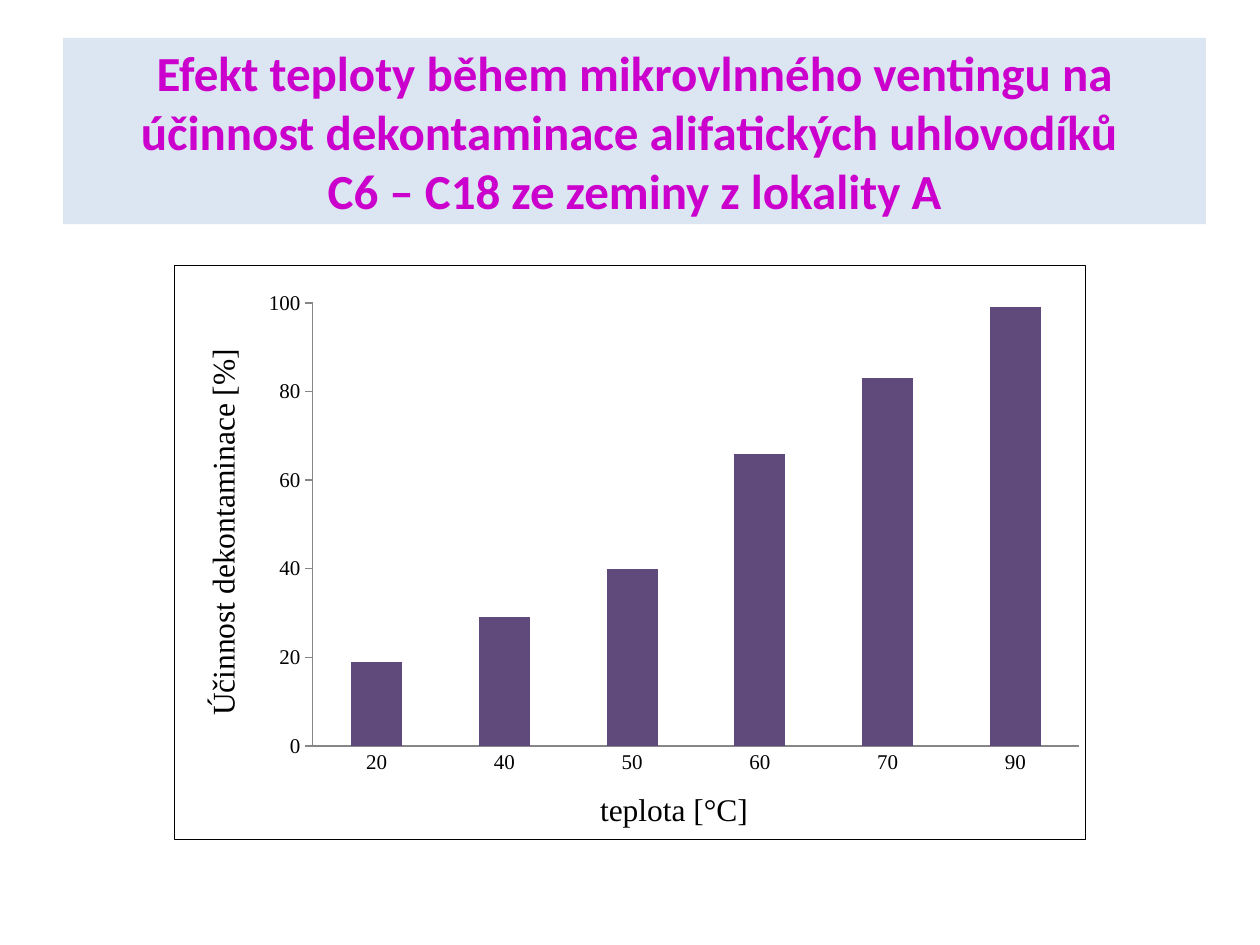
from lxml import etree
from pptx import Presentation
from pptx.chart.data import CategoryChartData
from pptx.dml.color import RGBColor
from pptx.enum.chart import XL_CHART_TYPE as CT, XL_TICK_MARK as TICK
from pptx.enum.text import MSO_ANCHOR as ANCHOR, PP_ALIGN as ALIGN
from pptx.oxml import parse_xml
from pptx.oxml.ns import nsdecls, qn
from pptx.util import Inches, Pt

SERIF = "Times New Roman"
TITLE = ("Efekt teploty během mikrovlnného ventingu na účinnost "
         "dekontaminace alifatických uhlovodíků \vC6 – C18 ze zeminy z lokality A")
EFFICIENCY = {"20": 19, "40": 29, "50": 40, "60": 66, "70": 83, "90": 99}


def rgb(color):
    return RGBColor.from_string(color)


def format_font(font, name=SERIF, size=12, color="000000", bold=False):
    font.name, font.size, font.bold = name, Pt(size), bold
    font.color.rgb = rgb(color)


def set_text(tf, text, align=ALIGN.CENTER, **fmt):
    p = tf.paragraphs[0]
    p.text, p.alignment = text, align
    for r in p.runs:
        format_font(r.font, **fmt)


def set_plot_layout(chart, x, y, w, h):
    """Fix the inner plot area, in fractions of the chart."""
    area = chart._chartSpace.chart.plotArea
    for old in area.findall(qn("c:layout")):
        area.remove(old)
    layout = etree.Element(qn("c:layout"))
    manual = etree.SubElement(layout, qn("c:manualLayout"))
    for tag, val in (("layoutTarget", "inner"), ("xMode", "edge"), ("yMode", "edge"),
                     ("x", x), ("y", y), ("w", w), ("h", h)):
        etree.SubElement(manual, qn(f"c:{tag}")).set("val", str(val))
    area.insert(0, layout)


def set_chart_border(chart, color, width):
    chart._chartSpace.chart.addnext(parse_xml(
        f'<c:spPr {nsdecls("c", "a")}><a:noFill/><a:ln w="{Pt(width)}"><a:solidFill>'
        f'<a:srgbClr val="{color}"/></a:solidFill></a:ln></c:spPr>'))


def format_axis(axis, title, tick):
    axis.has_major_gridlines = False
    axis.major_tick_mark, axis.minor_tick_mark = tick, TICK.NONE
    axis.format.line.color.rgb = rgb("868686")
    axis.format.line.width = Pt(0.75)
    format_font(axis.tick_labels.font)
    set_text(axis.axis_title.text_frame, title, size=18)


def add_title(slide, x, y, w, h):
    sp = slide.shapes.title
    sp.left, sp.top, sp.width, sp.height = map(Inches, (x, y, w, h))
    sp.fill.solid()
    sp.fill.fore_color.rgb = rgb("DCE6F2")
    tf = sp.text_frame
    tf.word_wrap, tf.vertical_anchor = True, ANCHOR.MIDDLE
    set_text(tf, TITLE, name="Calibri", size=28, color="CC00CC", bold=True)


def add_efficiency_chart(slide, x, y, w, h):
    data = CategoryChartData(number_format="0")
    data.categories = list(EFFICIENCY)
    data.add_series("Series 1", list(EFFICIENCY.values()))
    chart = slide.shapes.add_chart(CT.COLUMN_CLUSTERED,
                                   *map(Inches, (x, y, w, h)), data).chart
    chart.has_legend = chart.has_title = False
    set_chart_border(chart, "000000", 0.5)
    set_plot_layout(chart, 0.152, 0.066, 0.841, 0.771)
    format_font(chart.font)

    # Columns
    plot = chart.plots[0]
    plot.gap_width, plot.vary_by_categories = 150, False
    fill = plot.series[0].format.fill
    fill.solid()
    fill.fore_color.rgb = rgb("604A7B")

    # Axes
    format_axis(chart.category_axis, "teplota [°C]", TICK.NONE)
    axis = chart.value_axis
    format_axis(axis, "Účinnost dekontaminace [%]", TICK.OUTSIDE)
    axis.minimum_scale, axis.maximum_scale, axis.major_unit = 0, 100, 20
    axis.tick_labels.number_format = "0"
    axis.tick_labels.number_format_is_linked = False


def main():
    prs = Presentation()
    prs.slide_width, prs.slide_height = Inches(10), Inches(7.5)
    slide = prs.slides.add_slide(prs.slide_layouts[5])
    add_title(slide, 0.5, 0.3, 9.07, 1.48)
    add_efficiency_chart(slide, 1.38, 2.1, 7.24, 4.57)
    prs.save("out.pptx")


if __name__ == "__main__":
    main()
